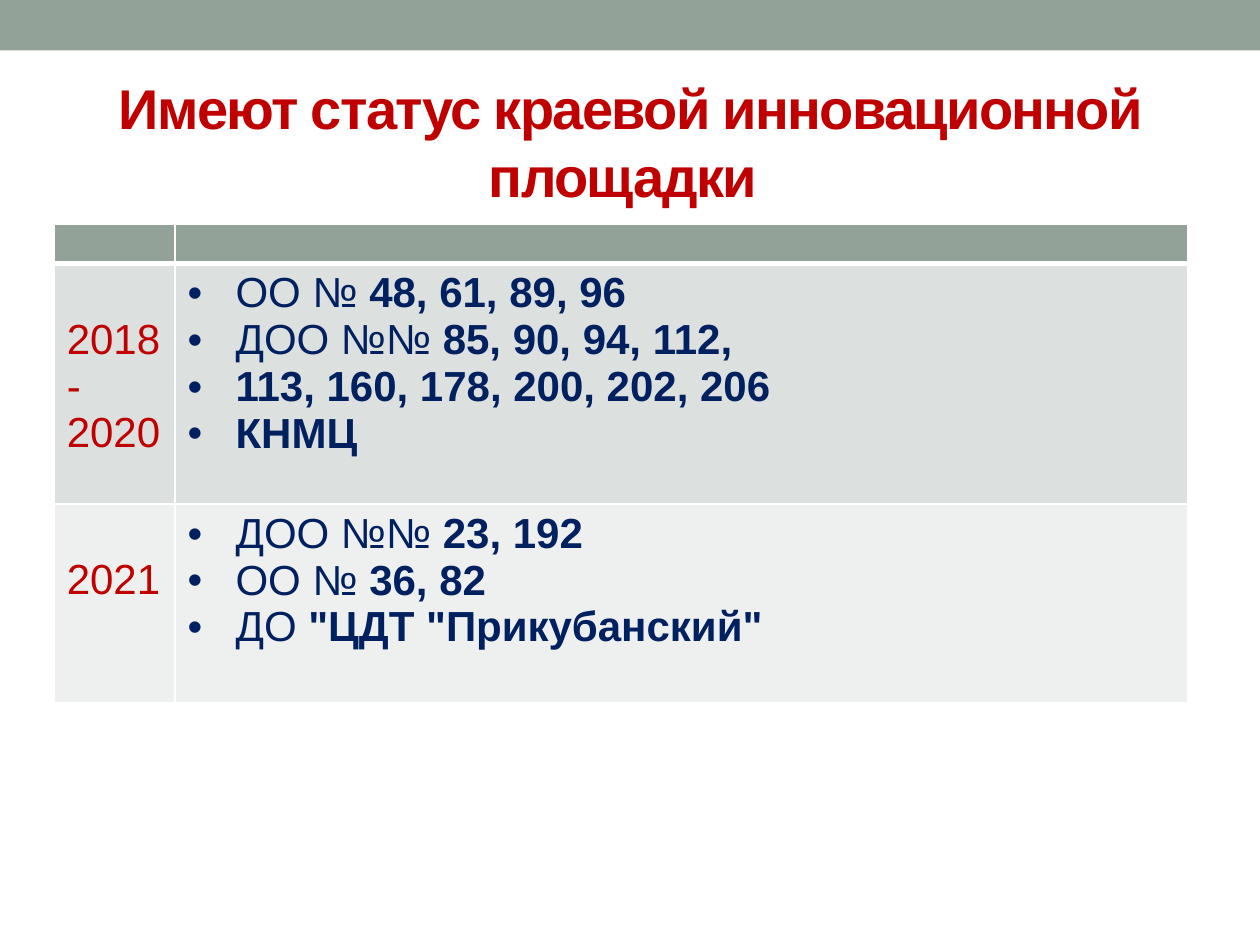
from typing import NamedTuple

from lxml import etree
from pptx import Presentation
from pptx.dml.color import RGBColor
from pptx.enum.shapes import MSO_SHAPE
from pptx.enum.text import MSO_ANCHOR, PP_ALIGN
from pptx.oxml.ns import qn
from pptx.util import Inches, Pt

RECTANGLE = MSO_SHAPE.RECTANGLE
MIDDLE = MSO_ANCHOR.MIDDLE
CENTER = PP_ALIGN.CENTER

SAGE, RED, NAVY, WHITE = "93A299", "C00000", "002060", "FFFFFF"
COLUMN_WIDTHS = (0.96, 8.04)
HEADER_HEIGHT = 0.31
BODY_SIZE = 24
BULLET_INDENT = 0.38


class Item(NamedTuple):
    label: str
    numbers: str


class Period(NamedTuple):
    years: str
    height: float
    fill: str
    items: tuple[Item, ...]


PERIODS = (
    Period("2018-2020", 1.91, "DCE0DE", (
        Item("ОО № ", "48, 61, 89, 96"),
        Item("ДОО №№", " 85, 90, 94, 112,"),
        Item("", "113, 160, 178, 200, 202, 206"),
        Item("", "КНМЦ"),
    )),
    Period("2021", 1.58, "EEF0EF", (
        Item("ДОО №№ ", "23, 192"),
        Item("ОО №", " 36, 82"),
        Item("ДО", ' "ЦДТ "Прикубанский"'),
    )),
)


def paint(fill, color: str) -> None:
    fill.solid()
    fill.fore_color.rgb = RGBColor.from_string(color)


def add_run(paragraph, text: str, size: float, color: str, bold: bool = False):
    run = paragraph.add_run()
    run.text = text
    font_values = {"name": "Arial", "size": Pt(size), "bold": bold}
    for name, value in font_values.items():
        setattr(run.font, name, value)
    run.font.color.rgb = RGBColor.from_string(color)
    return run


def add_bullet(paragraph) -> None:
    properties = paragraph._p.get_or_add_pPr()
    properties.set("marL", str(Inches(BULLET_INDENT)))
    properties.set("indent", str(-Inches(BULLET_INDENT)))
    etree.SubElement(properties, qn("a:buFont")).set("typeface", "Arial")
    etree.SubElement(properties, qn("a:buChar")).set("char", "•")


def format_cell(cell, color: str, bottom_width: float = 1) -> None:
    """Give the cell white borders and a solid fill."""
    properties = cell._tc.get_or_add_tcPr()
    widths = {"lnL": 1, "lnR": 1, "lnT": 1, "lnB": bottom_width}
    for side, width in widths.items():
        line = etree.SubElement(properties, qn(f"a:{side}"), w=str(Pt(width)))
        solid = etree.SubElement(line, qn("a:solidFill"))
        etree.SubElement(solid, qn("a:srgbClr")).set("val", WHITE)
    paint(cell.fill, color)


def add_top_band(slide) -> None:
    band = slide.shapes.add_shape(RECTANGLE, 0, 0, Inches(10), Inches(0.4))
    band.shadow.inherit = False
    paint(band.fill, SAGE)
    band.line.fill.background()


def add_title(slide) -> None:
    box = slide.shapes.add_textbox(Inches(0.5), Inches(0.58), Inches(9), Inches(1.08))
    frame = box.text_frame
    frame.word_wrap = True
    frame.vertical_anchor = MIDDLE
    paragraph = frame.paragraphs[0]
    paragraph.alignment = CENTER
    run = add_run(paragraph, "Имеют статус краевой инновационной площадки ", 32, RED, True)
    run.font._element.set("spc", "-100")


def fill_period(table, row: int, period: Period) -> None:
    years_cell, items_cell = table.cell(row, 0), table.cell(row, 1)
    for cell in (years_cell, items_cell):
        format_cell(cell, period.fill)
    years_cell.margin_top = Inches(0.42)
    add_run(years_cell.text_frame.paragraphs[0], period.years, BODY_SIZE, RED)
    frame = items_cell.text_frame
    for index, item in enumerate(period.items):
        paragraph = frame.add_paragraph() if index else frame.paragraphs[0]
        add_bullet(paragraph)
        if item.label:
            add_run(paragraph, item.label, BODY_SIZE, NAVY)
        add_run(paragraph, item.numbers, BODY_SIZE, NAVY, True)


def add_status_table(slide) -> None:
    heights = (HEADER_HEIGHT, *(period.height for period in PERIODS))
    table = slide.shapes.add_table(
        len(heights), len(COLUMN_WIDTHS), Inches(0.43), Inches(1.78),
        Inches(sum(COLUMN_WIDTHS)), Inches(sum(heights)),
    ).table
    for column, width in zip(table.columns, COLUMN_WIDTHS):
        column.width = Inches(width)
    for row, height in zip(table.rows, heights):
        row.height = Inches(height)
    for cell in table.rows[0].cells:
        cell.margin_top = cell.margin_bottom = 0
        format_cell(cell, SAGE, bottom_width=3)
    for row, period in enumerate(PERIODS, start=1):
        fill_period(table, row, period)


def main() -> None:
    presentation = Presentation()
    presentation.slide_width = Inches(10)
    presentation.slide_height = Inches(7.5)
    slide = presentation.slides.add_slide(presentation.slide_layouts[6])
    add_top_band(slide)
    add_title(slide)
    add_status_table(slide)
    presentation.save("out.pptx")


if __name__ == "__main__":
    main()
